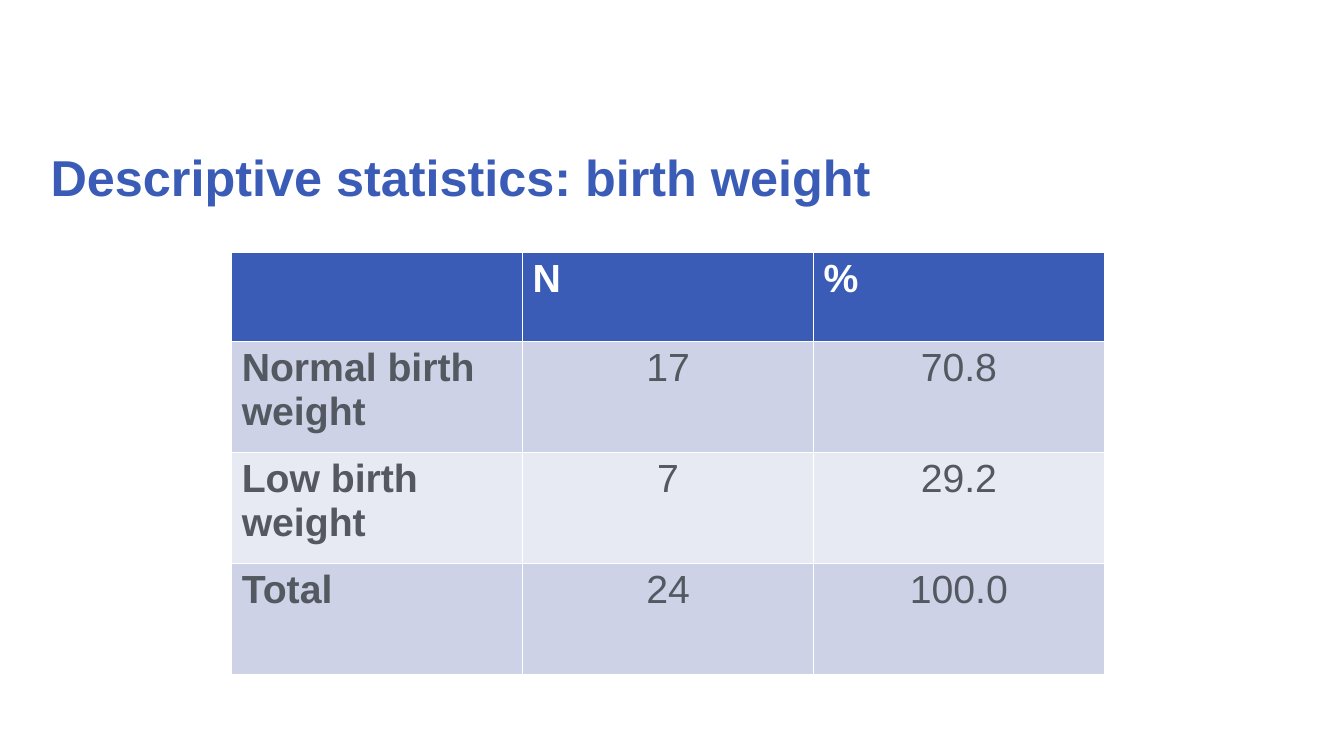
from pptx import Presentation
from pptx.dml.color import RGBColor as Rgb
from pptx.enum.text import MSO_ANCHOR as Anchor, PP_ALIGN as Align
from pptx.util import Cm, Pt

BLUE, WHITE, GREY = "3A5CB7", "FFFFFF", "545860"
BANDS = ["CED2E6", "E8EAF3"]


def style(font, color, **form):
    font.color.rgb = Rgb.from_string(color)
    for key, val in {"name": "Arial", **form}.items():
        setattr(font, key, val)


deck = Presentation()
deck.slide_width, deck.slide_height = Cm(33.87), Cm(19.05)
slide = deck.slides.add_slide(deck.slide_layouts[5])

title = slide.shapes.title
place = {"left": 1.02, "top": 2.69, "width": 31.85, "height": 3.68}
for key, val in place.items():
    setattr(title, key, Cm(val))
frame = title.text_frame
frame.text = "Descriptive statistics: birth weight"
frame.vertical_anchor = Anchor.MIDDLE
head = frame.paragraphs[0]
head.alignment = Align.LEFT
head.line_spacing = 0.9
style(head.font, BLUE, size=Pt(36), bold=True)

rows = [
    ["", "N", "%"],
    ["Normal birth weight", "17", "70.8"],
    ["Low birth weight", "7", "29.2"],
    ["Total", "24", "100.0"],
]
# The default table style supplies the white rules between cells.
table = slide.shapes.add_table(
    len(rows), 3, Cm(5.84), Cm(6.36), Cm(22), Cm(10.6)
).table
for col in table.columns:
    col.width = Cm(7.33)

for i, row in enumerate(rows):
    table.rows[i].height = Cm(2.8 if i else 2.24)
    for j, text in enumerate(row):
        cell = table.cell(i, j)
        cell.fill.solid()
        fill = BANDS[(i - 1) % 2] if i else BLUE
        cell.fill.fore_color.rgb = Rgb.from_string(fill)
        cell.text = text
        para = cell.text_frame.paragraphs[0]
        value = i > 0 and j > 0
        para.alignment = Align.CENTER if value else Align.LEFT
        style(para.font, GREY if i else WHITE, size=Pt(28), bold=not value)

deck.save("out.pptx")
